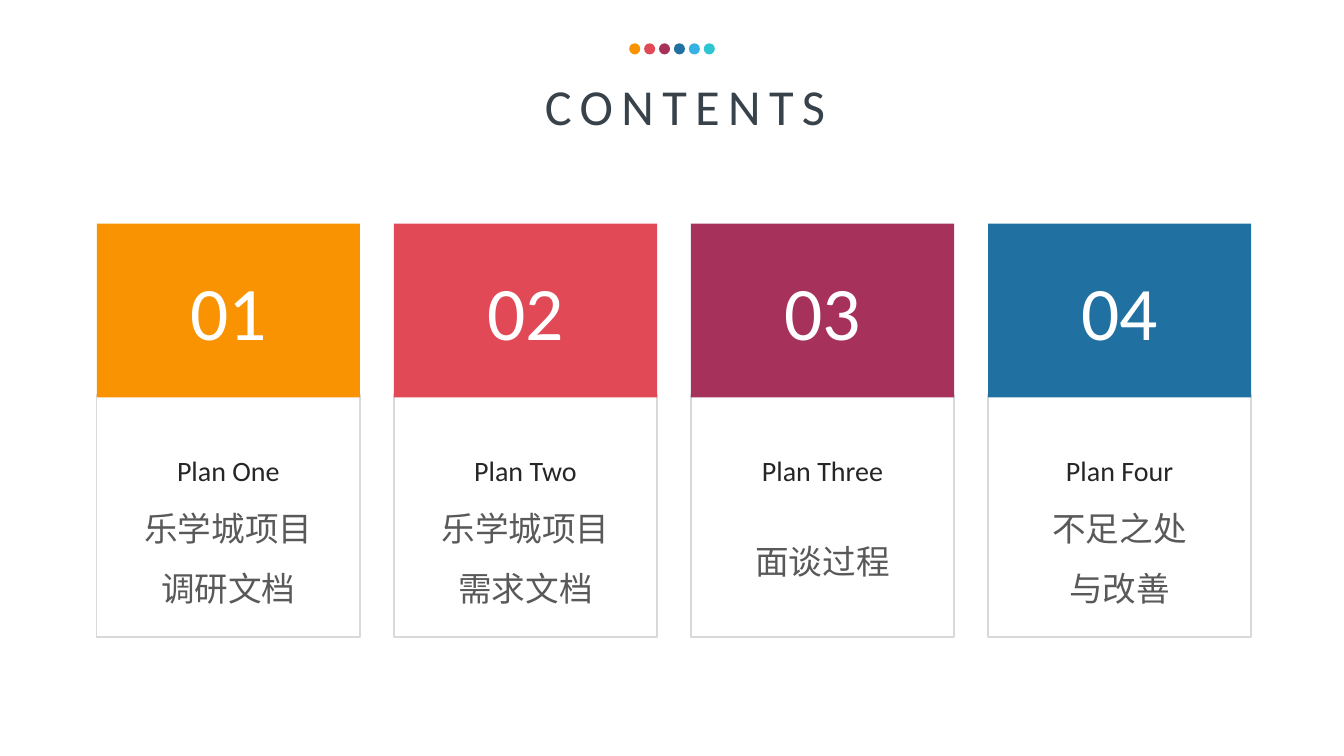
from dataclasses import dataclass

from pptx import Presentation
from pptx.dml.color import RGBColor as RGB
from pptx.enum.shapes import MSO_SHAPE as SHAPE
from pptx.enum.text import MSO_ANCHOR as ANCHOR, MSO_AUTO_SIZE as FIT, PP_ALIGN as ALIGN
from pptx.util import Inches, Pt


@dataclass(frozen=True)
class Theme:
    """Colours, font and type sizes of the slide."""
    accents: tuple = ("F99302", "E14956", "A6315B", "2070A1", "34B2E4", "2CC6D2")
    title: str = "38424B"
    label: str = "262626"
    body: str = "595959"
    border: str = "D9D9D9"
    white: str = "FFFFFF"
    font: str = "Calibri"
    title_size: int = 36
    number_size: int = 54
    label_size: int = 20
    body_size: int = 24


THEME = Theme()
CARDS = (
    ("Plan One", ("乐学城项目", "调研文档")),
    ("Plan Two", ("乐学城项目", "需求文档")),
    ("Plan Three", ("面谈过程",)),
    ("Plan Four", ("不足之处", "与改善")),
)
MAX_LINES = max(len(lines) for _, lines in CARDS)


def add_run(p, text, size, color):
    """Centre the paragraph and append a formatted run to it."""
    p.alignment = ALIGN.CENTER
    r = p.add_run()
    r.text = text
    r.font.name = THEME.font
    r.font.size = Pt(size)
    r.font.color.rgb = RGB.from_string(color)
    return r


def add_block(s, kind, box, fill=None, line=None):
    """Add a flat preset shape with an optional fill and outline."""
    sp = s.shapes.add_shape(kind, *map(Inches, box))
    sp.shadow.inherit = False
    if fill:
        sp.fill.solid()
        sp.fill.fore_color.rgb = RGB.from_string(fill)
    else:
        sp.fill.background()
    if line:
        sp.line.color.rgb = RGB.from_string(line)
        sp.line.width = Pt(1)
    else:
        sp.line.fill.background()
    return sp


def add_title(s, box, text):
    """Place the letter-spaced title in the title placeholder."""
    sp = s.shapes.title
    sp.left, sp.top, sp.width, sp.height = map(Inches, box)
    tf = sp.text_frame
    tf.word_wrap = False
    tf.auto_size = FIT.NONE
    tf.vertical_anchor = ANCHOR.MIDDLE
    tf.margin_left, tf.margin_right = Inches(0.28), 0
    r = add_run(tf.paragraphs[0], text, THEME.title_size, THEME.title)
    r.font._element.set("spc", "600")


def add_dots(s, box):
    """Spread one dot per accent colour across the box."""
    left, top, width, size = box
    pitch = (width - size) / (len(THEME.accents) - 1)
    for i, color in enumerate(THEME.accents):
        add_block(s, SHAPE.OVAL, (left + i * pitch, top, size, size), color)


def add_card(s, box, number, label, lines, color):
    """Draw a card: outlined panel, its text and the numbered head."""
    left, top, width, height = box
    head, overlap, inset = 0.42 * height, 0.03, 0.08 * width
    panel_top = top + head - overlap
    add_block(s, SHAPE.RECTANGLE, (left, panel_top, width, height - head + overlap),
              line=THEME.border)

    text_box = (left + inset, panel_top + 0.54, width - 2 * inset, 1.65)
    tf = s.shapes.add_textbox(*map(Inches, text_box)).text_frame
    tf.word_wrap = True
    tf.auto_size = FIT.SHAPE_TO_FIT_TEXT
    add_run(tf.paragraphs[0], label, THEME.label_size, THEME.label)
    for i, line in enumerate(lines):
        p = tf.add_paragraph()
        p.line_spacing = 1.5
        if i == 0 and len(lines) < MAX_LINES:
            p.space_before = Pt(1.2 * THEME.label_size)
        add_run(p, line, THEME.body_size, THEME.body)

    sp = add_block(s, SHAPE.RECTANGLE, (left, top, width, head), color)
    sp.text_frame.vertical_anchor = ANCHOR.MIDDLE
    add_run(sp.text_frame.paragraphs[0], f"{number:02}", THEME.number_size, THEME.white)


def add_cards(s, box):
    """Lay the cards out in equal columns across the box."""
    left, top, width, height = box
    card = 0.228 * width
    pitch = (width - card) / (len(CARDS) - 1)
    for i, (label, lines) in enumerate(CARDS):
        add_card(s, (left + i * pitch, top, card, height), i + 1, label, lines,
                 THEME.accents[i])


def main():
    """Build and save the contents slide."""
    prs = Presentation()
    prs.slide_width, prs.slide_height = Inches(13.33), Inches(7.5)
    s = prs.slides.add_slide(prs.slide_layouts[5])
    add_title(s, (5.02, 0.69, 3.27, 0.71), "CONTENTS")
    add_dots(s, (6.24, 0.43, 0.85, 0.11))
    add_cards(s, (0.96, 2.22, 11.45, 4.1))
    prs.save("out.pptx")


if __name__ == "__main__":
    main()
